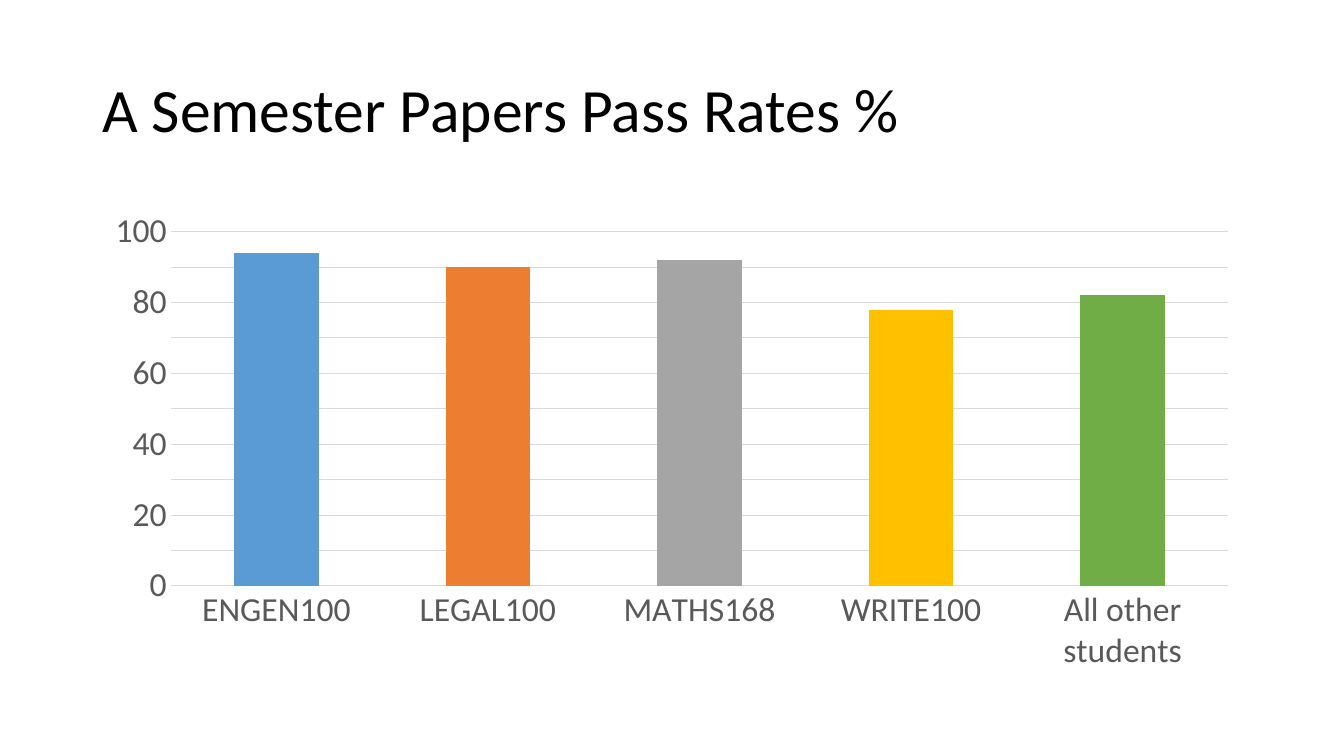
"""Build a slide with a column chart of semester paper pass rates."""
from typing import NamedTuple

from pptx import Presentation
from pptx import util as u
from pptx.chart.axis import _BaseAxis
from pptx.chart.data import CategoryChartData
from pptx.dml.color import RGBColor
from pptx.enum import chart as charts
from pptx.enum import text
from pptx.slide import Slide
from pptx.text.text import Font

PX = 9525
FONT = "Calibri"


class Frame(NamedTuple):
    """Position and size in px."""
    left: int
    top: int
    width: int
    height: int

    def emu(self) -> list[u.Emu]:
        """Return the four lengths in EMU."""
        return [u.Emu(length * PX) for length in self]


class Paper(NamedTuple):
    """One paper with its pass rate and column colour."""
    label: str
    pass_rate: int
    color: str


TITLE_FRAME = Frame(88, 38, 1104, 139)
CHART_FRAME = Frame(88, 192, 1104, 457)
PAPERS = [
    Paper("ENGEN100", 94, "5B9BD5"),
    Paper("LEGAL100", 90, "ED7D31"),
    Paper("MATHS168", 92, "A5A5A5"),
    Paper("WRITE100", 78, "FFC000"),
    Paper("All other students", 82, "70AD47"),
]


def rgb(value: str) -> RGBColor:
    """Turn a hex string into a colour."""
    return RGBColor.from_string(value)


def style_font(font: Font, size: int, color: str) -> None:
    """Set typeface, size and colour."""
    font.name = FONT
    font.size = u.Pt(size)
    font.bold = False
    font.color.rgb = rgb(color)


def style_axis(axis: _BaseAxis) -> None:
    """Hide the axis line and ticks and set the label font."""
    axis.major_tick_mark = charts.XL_TICK_MARK.NONE
    axis.minor_tick_mark = charts.XL_TICK_MARK.NONE
    axis.format.line.fill.background()
    style_font(axis.tick_labels.font, 24, "595959")


def add_title(page: Slide, title: str) -> None:
    """Add the slide heading."""
    box = page.shapes.add_textbox(*TITLE_FRAME.emu())
    box.text_frame.word_wrap = True
    box.text_frame.vertical_anchor = text.MSO_ANCHOR.MIDDLE
    para = box.text_frame.paragraphs[0]
    para.line_spacing = 0.9
    span = para.add_run()
    span.text = title
    style_font(span.font, 44, "000000")


def add_pass_rates(page: Slide, papers: list[Paper]) -> None:
    """Add the column chart with one coloured column per paper."""
    rates = CategoryChartData()
    rates.categories = [paper.label for paper in papers]
    rates.add_series("Series 1", [paper.pass_rate for paper in papers])
    chart = page.shapes.add_chart(
        charts.XL_CHART_TYPE.COLUMN_STACKED, *CHART_FRAME.emu(), rates
    ).chart
    chart.has_title = False
    chart.has_legend = False
    style_font(chart.font, 10, "000000")

    style_axis(chart.category_axis)
    value_axis = chart.value_axis
    style_axis(value_axis)
    value_axis.minimum_scale = 0
    value_axis.maximum_scale = 100
    value_axis.major_unit = 10
    value_axis.has_major_gridlines = True
    grid = value_axis.major_gridlines.format.line
    grid.color.rgb = rgb("D9D9D9")
    grid.width = u.Pt(0.75)

    plot = chart.plots[0]
    plot.gap_width = 150
    plot.overlap = 100
    plot.vary_by_categories = False
    series = plot.series[0]
    series.format.fill.solid()
    series.format.fill.fore_color.rgb = rgb(papers[0].color)
    for index, paper in enumerate(papers):
        fill = series.points[index].format.fill
        fill.solid()
        fill.fore_color.rgb = rgb(paper.color)


def main() -> None:
    """Build and save the deck."""
    deck = Presentation()
    deck.slide_width = u.Emu(1280 * PX)
    deck.slide_height = u.Emu(720 * PX)
    page = deck.slides.add_slide(deck.slide_layouts[6])
    add_title(page, "A Semester Papers Pass Rates %")
    add_pass_rates(page, PAPERS)
    deck.save("out.pptx")


if __name__ == "__main__":
    main()
